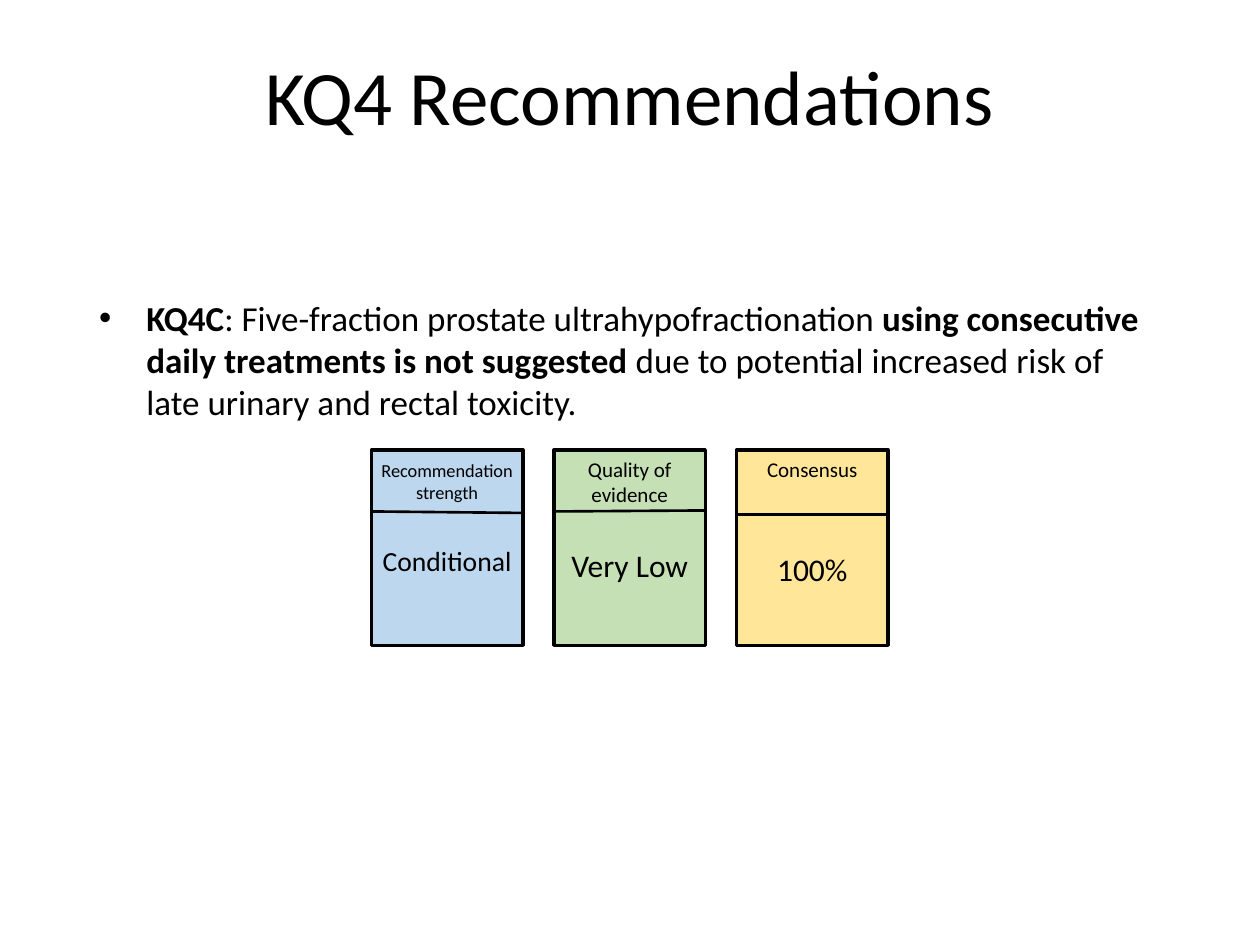
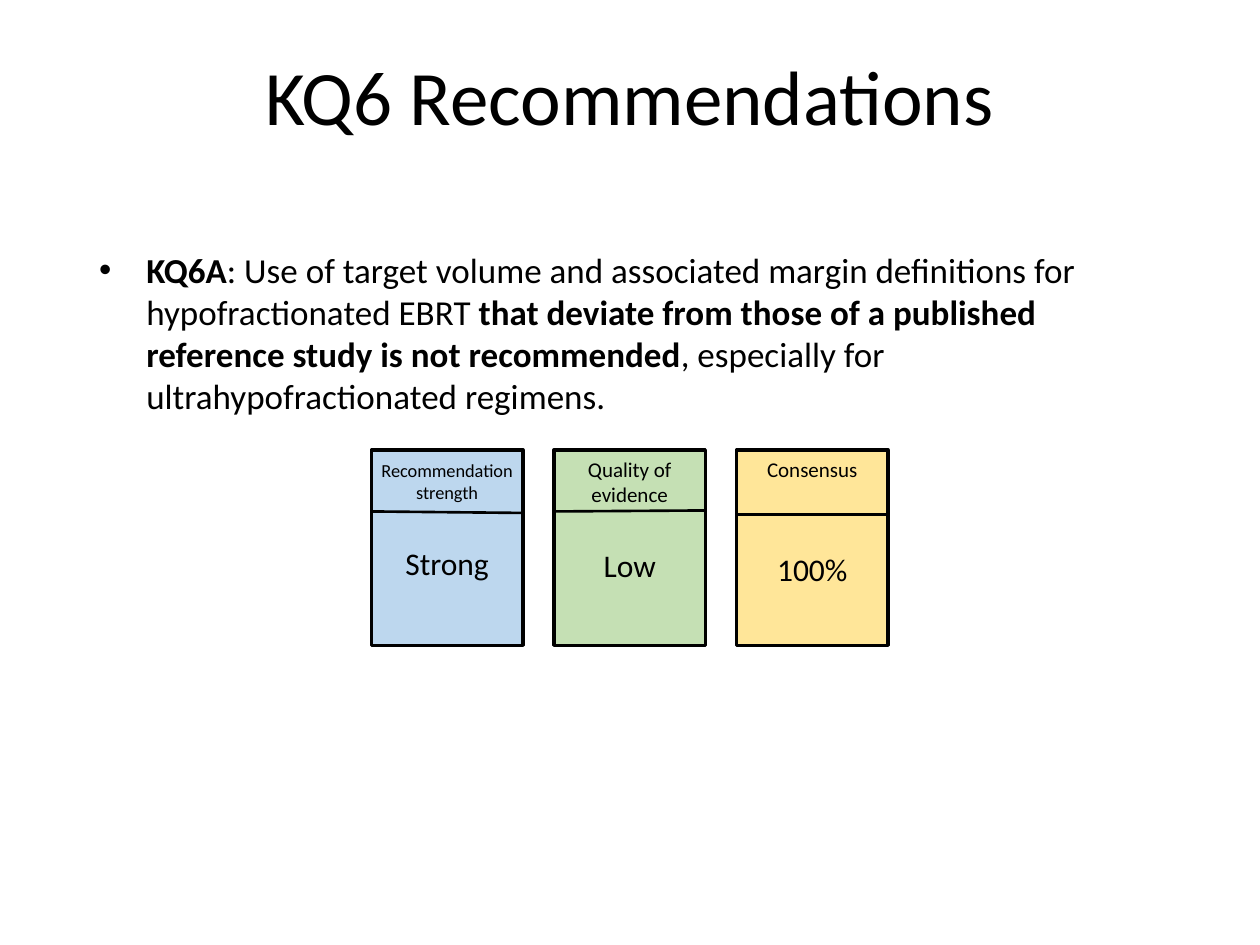
from lxml.etree import SubElement
from pptx import Presentation
from pptx.dml.color import RGBColor
from pptx.enum.shapes import MSO_CONNECTOR, MSO_SHAPE
from pptx.enum.text import MSO_ANCHOR, PP_ALIGN
from pptx.oxml.ns import qn
from pptx.util import Cm, Pt

FONT = "Calibri"
COLOURS = {
    "text": "000000",
    "strength": "BDD7EE",
    "evidence": "C5E0B4",
    "consensus": "FFE699",
}

RECOMMENDATIONS = [
    {
        "title": "KQ4 Recommendations",
        "top": 5.84,
        "statement": [
            ("KQ4C", True),
            (": Five-fraction prostate ultrahypofractionation ", False),
            ("using consecutive daily treatments is not suggested", True),
            (" due to potential increased risk of late urinary and rectal toxicity.", False),
        ],
        "ratings": [("Conditional", 15.8), ("Very Low", 18), ("100%", 18)],
    },
    {
        "title": "KQ6 Recommendations",
        "top": 4.88,
        "statement": [
            ("KQ6A", True),
            (": Use of target volume and associated margin definitions for "
             "hypofractionated EBRT ", False),
            ("that deviate from those of a published reference study is not recommended", True),
            (", especially for ultrahypofractionated regimens.", False),
        ],
        "ratings": [("Strong", 18), ("Low", 18), ("100%", 18)],
    },
]

CARDS = [
    {"colour": "strength", "label": "Recommendation strength", "size": 10.5,
     "insets": (0.1, 0.18), "divider": (1.24, 1.27), "value_top": 1.22, "value_inset": 0.1},
    {"colour": "evidence", "label": "Quality of evidence", "size": 12,
     "insets": (0.25, 0.13), "divider": (1.24, 1.22), "value_top": 1.22, "value_inset": 0.13},
    {"colour": "consensus", "label": "Consensus", "size": 12,
     "insets": (0.25, 0.13), "divider": (1.3, 1.3), "value_top": 1.3, "value_inset": 0.13},
]
CARD_LEFT, CARD_TOP, CARD_WIDTH, CARD_HEIGHT = 7.49, 9.07, 3.05, 3.94
CARD_STEP = 3.68
LABEL_HEIGHT, VALUE_HEIGHT, VALUE_DROP = 1.27, 1.6, 0.58


def colour(name):
    return RGBColor.from_string(COLOURS[name])


def style(paragraph, size, alignment=PP_ALIGN.CENTER):
    paragraph.alignment = alignment
    paragraph.font.name = FONT
    paragraph.font.size = Pt(size)
    paragraph.font.color.rgb = colour("text")


def set_frame(frame, side, top):
    frame.word_wrap = True
    frame.vertical_anchor = MSO_ANCHOR.TOP
    frame.margin_left = frame.margin_right = Cm(side)
    frame.margin_top = Cm(top)


def add_title(slide, text):
    title = slide.shapes.title
    title.left, title.top, title.width, title.height = Cm(1.27), Cm(0.76), Cm(22.86), Cm(3.18)
    set_frame(title.text_frame, 0.25, 0.22)
    title.text_frame.text = text
    style(title.text_frame.paragraphs[0], 44)


def add_statement(slide, runs, top):
    box = slide.shapes.add_textbox(Cm(1.75), Cm(top), Cm(21.9), Cm(4.8))
    set_frame(box.text_frame, 0.25, 0.13)
    paragraph = box.text_frame.paragraphs[0]
    properties = paragraph._p.get_or_add_pPr()
    properties.set("marL", str(Cm(0.95)))
    properties.set("indent", str(-Cm(0.95)))
    SubElement(properties, qn("a:buFont"), typeface="Arial")
    SubElement(properties, qn("a:buChar"), char="•")
    style(paragraph, 20, PP_ALIGN.LEFT)
    for text, bold in runs:
        run = paragraph.add_run()
        run.text = text
        run.font.bold = bold


def add_card_text(group, left, top, height, text, size, side, inset):
    box = group.shapes.add_textbox(Cm(left), Cm(top), Cm(CARD_WIDTH), Cm(height))
    set_frame(box.text_frame, side, inset)
    box.text_frame.text = text
    style(box.text_frame.paragraphs[0], size)


def add_card(group, left, card, rating):
    panel = group.shapes.add_shape(
        MSO_SHAPE.RECTANGLE, Cm(left), Cm(CARD_TOP), Cm(CARD_WIDTH), Cm(CARD_HEIGHT))
    panel.shadow.inherit = False
    panel.fill.solid()
    panel.fill.fore_color.rgb = colour(card["colour"])
    panel.line.color.rgb = colour("text")
    panel.line.width = Pt(2)

    start, end = card["divider"]
    divider = group.shapes.add_connector(
        MSO_CONNECTOR.STRAIGHT, Cm(left), Cm(CARD_TOP + start),
        Cm(left + CARD_WIDTH), Cm(CARD_TOP + end))
    divider.line.color.rgb = colour("text")
    divider.line.width = Pt(1.5)
    SubElement(divider._element.spPr, qn("a:effectLst"))

    add_card_text(group, left, CARD_TOP, LABEL_HEIGHT,
                  card["label"], card["size"], *card["insets"])
    add_card_text(group, left, CARD_TOP + card["value_top"], VALUE_HEIGHT,
                  *rating, 0.1, card["value_inset"] + VALUE_DROP)


def main():
    presentation = Presentation()
    presentation.slide_width, presentation.slide_height = Cm(25.4), Cm(19.05)
    for recommendation in RECOMMENDATIONS:
        slide = presentation.slides.add_slide(presentation.slide_layouts[5])
        add_title(slide, recommendation["title"])
        add_statement(slide, recommendation["statement"], recommendation["top"])
        group = slide.shapes.add_group_shape()
        for index, (card, rating) in enumerate(zip(CARDS, recommendation["ratings"])):
            add_card(group, CARD_LEFT + index * CARD_STEP, card, rating)
    presentation.save("out.pptx")


if __name__ == "__main__":
    main()
